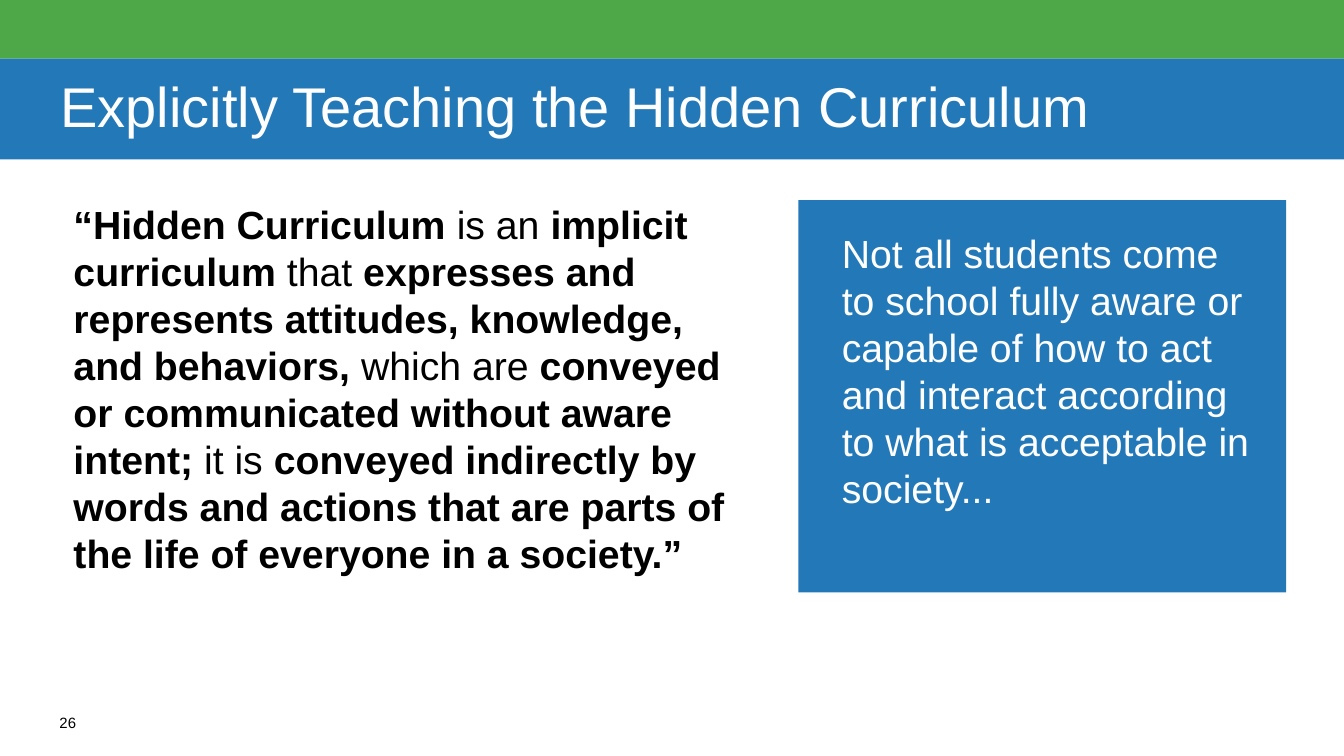
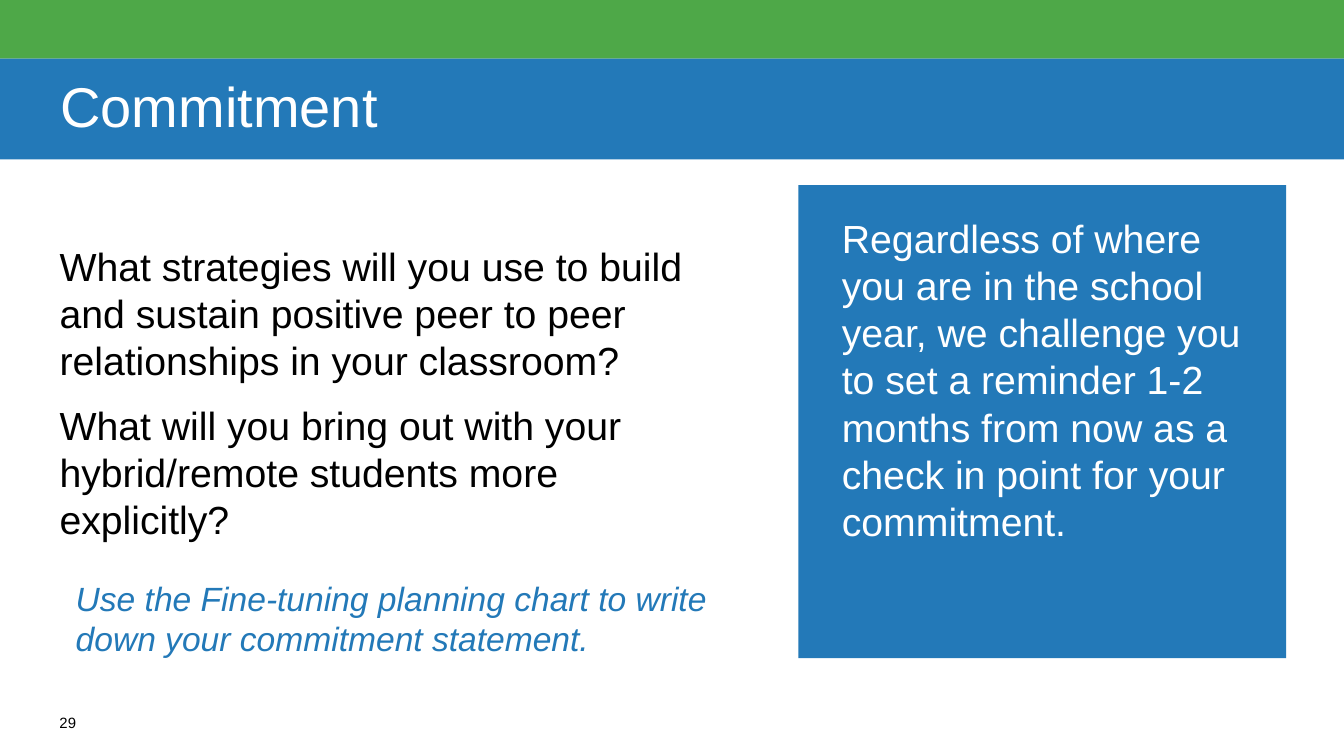
import pptx
import pptx.util
import pptx.dml.color
import pptx.enum.shapes
import pptx.enum.text

GREEN = pptx.dml.color.RGBColor(0x4E, 0xA8, 0x48)
BLUE = pptx.dml.color.RGBColor(0x23, 0x79, 0xB8)
WHITE = pptx.dml.color.RGBColor(0xFF, 0xFF, 0xFF)
BLACK = pptx.dml.color.RGBColor(0, 0, 0)
FONT = "Arial"

# Grid: 100 columns across a 10 inch slide, rows of the same size
CELL = 0.1
COLS, ROWS = 100, 56.25
LEFT, TEXT_W = 4.43, 50.5
BOX_X, BOX_W = 59.4, 36.3
BAND_H, TITLE_H = 4.37, 7.5


def grid(cells):
    return pptx.util.Inches(cells * CELL)


def block(slide, x, y, wide, high, fill):
    """Draw a plain filled rectangle."""
    rect = pptx.enum.shapes.MSO_SHAPE.RECTANGLE
    shape = slide.shapes.add_shape(rect, grid(x), grid(y), grid(wide), grid(high))
    shape.shadow.inherit = False
    shape.fill.solid()
    shape.fill.fore_color.rgb = fill
    shape.line.fill.background()
    return shape


def label(slide, x, y, wide, high):
    return slide.shapes.add_textbox(grid(x), grid(y), grid(wide), grid(high))


def write(shape, paras, size, color, pad=(0, 0), indent=0, lead=1.0,
          gap=0, italic=False, middle=False):
    """Fill a shape with paragraphs, each a list of (text, bold) runs."""
    frame = shape.text_frame
    frame.word_wrap = True
    frame.margin_left = frame.margin_right = grid(pad[0])
    frame.margin_top = frame.margin_bottom = grid(pad[1])
    anchor = pptx.enum.text.MSO_ANCHOR
    frame.vertical_anchor = anchor.MIDDLE if middle else anchor.TOP
    for i, runs in enumerate(paras):
        para = frame.add_paragraph() if i else frame.paragraphs[0]
        para.alignment = pptx.enum.text.PP_ALIGN.LEFT
        para.line_spacing = lead
        if i:
            para.space_before = pptx.util.Pt(gap)
        if indent:
            para._p.get_or_add_pPr().set("marL", str(grid(indent)))
        for text, bold in runs:
            run = para.add_run()
            run.text = text
            font = run.font
            font.name, font.size = FONT, pptx.util.Pt(size)
            font.bold, font.italic = bold, italic
            font.color.rgb = color


def plain(*texts):
    return [[(text, False)] for text in texts]


def base(deck, title, number):
    """Add a slide with its bands, title and page number."""
    slide = deck.slides.add_slide(deck.slide_layouts[6])
    block(slide, 0, 0, COLS, BAND_H, GREEN)
    write(label(slide, LEFT, 53.1, 3.7, 2), plain(number), 8, BLACK)
    bar = block(slide, 0, BAND_H, COLS, TITLE_H, BLUE)
    write(bar, plain(title), 30, WHITE, pad=(4.5, 0), lead=0.9, middle=True)
    return slide


def panel(slide, y, high, text):
    """Add the blue box on the right."""
    box = block(slide, BOX_X, y, BOX_W, high, BLUE)
    write(box, plain(text), 21, WHITE, pad=(2.2, 2.2), indent=1.04)


def hidden(deck):
    slide = base(deck, "Explicitly Teaching the Hidden Curriculum", "26")
    quote = [
        ("“Hidden Curriculum ", True),
        ("is an ", False),
        ("implicit curriculum", True),
        (" that ", False),
        ("expresses and represents attitudes, knowledge, and behaviors,", True),
        (" which are ", False),
        ("conveyed or communicated without aware intent;", True),
        (" it is ", False),
        ("conveyed indirectly by words and actions that are parts of "
         "the life of everyone in a society.”", True),
    ]
    write(label(slide, LEFT, 14.88, TEXT_W, 32.8), [quote], 21, BLACK, indent=1.04)
    panel(slide, 14.88, 29.2,
          "Not all students come to school fully aware or capable of how to act "
          "and interact according to what is acceptable in society...")


def commit(deck):
    slide = base(deck, "Commitment", "29")
    asks = plain(
        "What strategies will you use to build and sustain positive peer to peer "
        "relationships in your classroom?",
        "What will you bring out with your hybrid/remote students more explicitly?")
    write(label(slide, LEFT, 18, TEXT_W, 24.4), asks, 21, BLACK, gap=10)
    panel(slide, 13.77, 35.2,
          "Regardless of where you are in the school year, we challenge you to set "
          "a reminder 1-2 months from now as a check in point for your commitment.")
    # Closing prompt
    hint = plain("Use the Fine-tuning planning chart to write down your "
                 "commitment statement.")
    write(label(slide, LEFT, 43, TEXT_W, 7.5), hint, 18, BLUE, indent=1.2, italic=True)


def main():
    deck = pptx.Presentation()
    deck.slide_width, deck.slide_height = grid(COLS), grid(ROWS)
    hidden(deck)
    commit(deck)
    deck.save("out.pptx")


if __name__ == "__main__":
    main()
